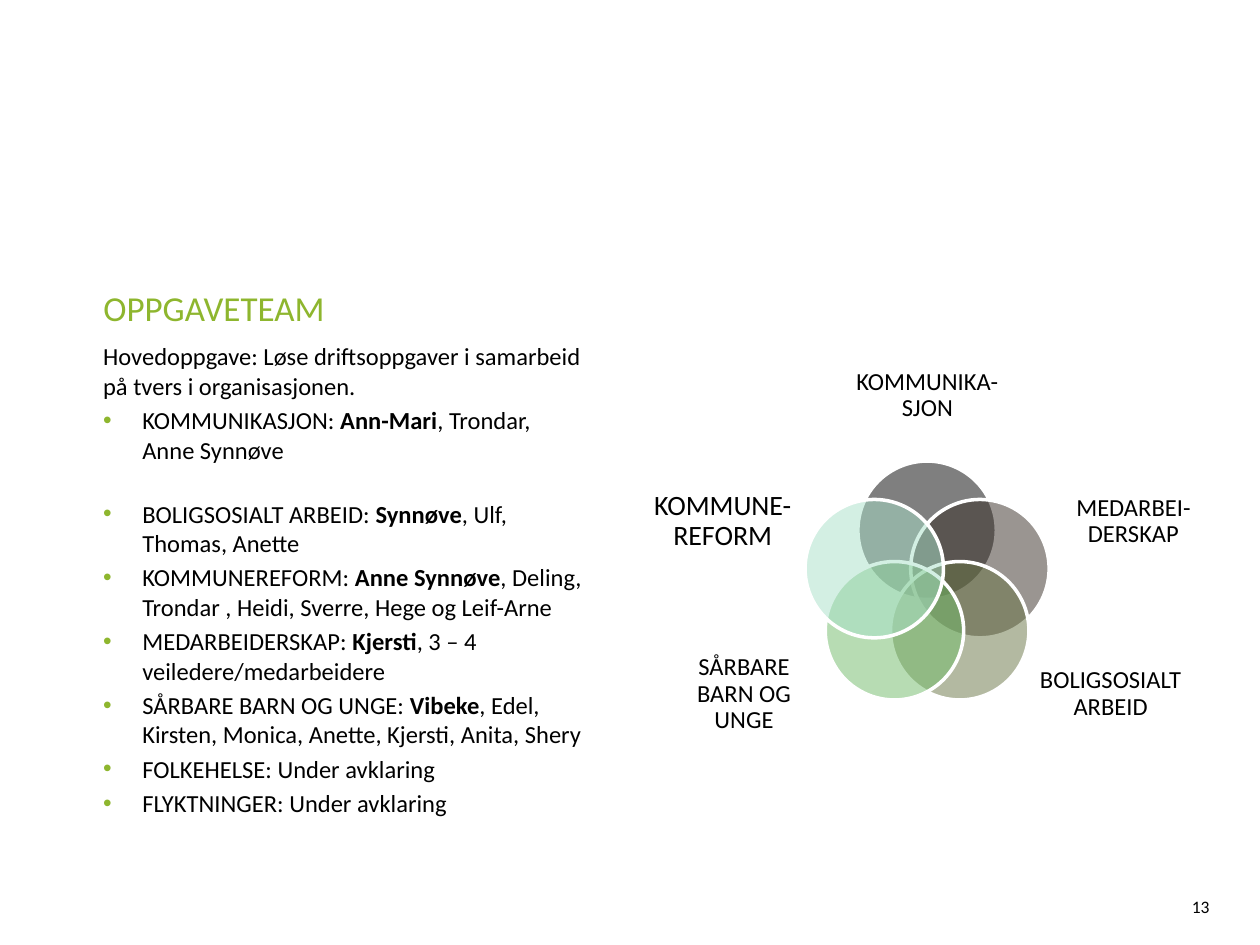
import math
from typing import NamedTuple

import pptx
import pptx.dml.color
import pptx.enum.shapes
import pptx.enum.text
import pptx.oxml.ns
import pptx.util
from lxml import etree

Cm, Pt = pptx.util.Cm, pptx.util.Pt
ALIGN = pptx.enum.text.PP_ALIGN
ANCHOR = pptx.enum.text.MSO_ANCHOR
qn = pptx.oxml.ns.qn

FONT = "Calibri"
COLORS = {"text": "000000", "accent": "8EB62E", "line": "FFFFFF"}


class Box(NamedTuple):
    left: float
    top: float
    width: float
    height: float


class Team(NamedTuple):
    head: str
    lead: str = ""
    rest: str = ""
    after: float = 0


class Petal(NamedTuple):
    label: str
    box: Box
    fill: str
    size: float = 14


TITLE = Box(1.83, 3.53, 8.36, 3.23)
BODY = Box(1.83, 6.76, 10.26, 9.98)
NUMBER = Box(22.91, 17.93, 2.59, 0.99)

INTRO = "Hovedoppgave: Løse driftsoppgaver i samarbeid på tvers i organisasjonen."
TEAMS = [
    Team("KOMMUNIKASJON: ", "Ann-Mari", ", Trondar,\vAnne Synnøve", 17),
    Team("BOLIGSOSIALT ARBEID: ", "Synnøve", ", Ulf, Thomas, Anette"),
    Team("KOMMUNEREFORM: ", "Anne Synnøve",
         ", Deling, Trondar , Heidi, Sverre, Hege og Leif-Arne"),
    Team("MEDARBEIDERSKAP: ", "Kjersti", ", 3 – 4 veiledere/medarbeidere"),
    Team("SÅRBARE BARN OG UNGE: ", "Vibeke",
         ", Edel, Kirsten, Monica, Anette, Kjersti, Anita, Shery"),
    Team("FOLKEHELSE: Under avklaring"),
    Team("FLYKTNINGER: Under avklaring"),
]

# Clockwise from the top of the ring
PETALS = [
    Petal("KOMMUNIKA-SJON", Box(17.07, 7.04, 3.25, 1.88), "000000"),
    Petal("MEDARBEI-DERSKAP", Box(21.39, 9.5, 2.92, 2.03), "362C25"),
    Petal("BOLIGSOSIALT ARBEID", Box(20.93, 12.98, 2.92, 2.03), "697545"),
    Petal("SÅRBARE BARN OG UNGE", Box(13.54, 12.98, 2.92, 2.03), "71BB69"),
    Petal("KOMMUNE-REFORM", Box(13.11, 9.5, 2.92, 2.03), "A9E1C9", 16),
]
HUB_X, HUB_Y, RING, DIAM = 18.69, 11.81, 1.12, 2.79


def rgb(code: str):
    return pptx.dml.color.RGBColor.from_string(code)


def place(box: Box) -> list:
    return [Cm(n) for n in box]


def add_run(para, text: str, size: float = 14, color: str = "text",
            bold: bool = False) -> None:
    for i, part in enumerate(text.split("\v")):
        if i:
            para.add_line_break()
        run = para.add_run()
        run.text = part
        run.font.name = FONT
        run.font.size = Pt(size)
        run.font.bold = bold
        run.font.color.rgb = rgb(COLORS[color])


def add_text(slide, box: Box):
    frame = slide.shapes.add_textbox(*place(box)).text_frame
    frame.word_wrap = True
    return frame


def add_bullet(para) -> None:
    props = para._p.get_or_add_pPr()
    props.set("marL", str(Cm(0.79)))
    props.set("indent", str(-Cm(0.79)))
    tint = etree.SubElement(props, qn("a:buClr"))
    etree.SubElement(tint, qn("a:srgbClr"), val=COLORS["accent"])
    etree.SubElement(props, qn("a:buFont"), typeface="Arial")
    etree.SubElement(props, qn("a:buChar"), char="•")


def add_team(frame, team: Team) -> None:
    para = frame.add_paragraph()
    add_bullet(para)
    para.space_before = Pt(2.8)
    para.space_after = Pt(team.after)
    add_run(para, team.head)
    if team.lead:
        add_run(para, team.lead, bold=True)
        add_run(para, team.rest)


def add_petal(slide, petal: Petal, angle: float) -> None:
    x = HUB_X + RING * math.sin(angle) - DIAM / 2
    y = HUB_Y - RING * math.cos(angle) - DIAM / 2
    disc = slide.shapes.add_shape(
        pptx.enum.shapes.MSO_SHAPE.OVAL, *place(Box(x, y, DIAM, DIAM)))
    disc.shadow.inherit = False
    disc.fill.solid()
    disc.fill.fore_color.rgb = rgb(petal.fill)
    tint = disc._element.spPr.find(qn("a:solidFill"))[0]
    etree.SubElement(tint, qn("a:alpha"), val="50000")
    disc.line.color.rgb = rgb(COLORS["line"])
    disc.line.width = Pt(2)

    frame = add_text(slide, petal.box)
    frame.margin_left = frame.margin_right = 0
    frame.margin_top = frame.margin_bottom = 0
    frame.vertical_anchor = ANCHOR.MIDDLE
    para = frame.paragraphs[0]
    para.alignment = ALIGN.CENTER
    para.line_spacing = 0.9
    add_run(para, petal.label, petal.size)


def main() -> None:
    deck = pptx.Presentation()
    deck.slide_width, deck.slide_height = Cm(25.4), Cm(19.05)
    slide = deck.slides.add_slide(deck.slide_layouts[5])

    # Title
    title = slide.shapes.title
    title.left, title.top, title.width, title.height = place(TITLE)
    frame = title.text_frame
    frame.word_wrap = True
    frame.auto_size = pptx.enum.text.MSO_AUTO_SIZE.NONE
    frame.vertical_anchor = ANCHOR.BOTTOM
    frame.paragraphs[0].alignment = ALIGN.LEFT
    add_run(frame.paragraphs[0], "OPPGAVETEAM", 20, "accent")

    # Team list
    frame = add_text(slide, BODY)
    add_run(frame.paragraphs[0], INTRO)
    for team in TEAMS:
        add_team(frame, team)

    # Ring of overlapping circles
    for i, petal in enumerate(PETALS):
        add_petal(slide, petal, math.tau * i / len(PETALS))

    # Slide number
    para = add_text(slide, NUMBER).paragraphs[0]
    para.alignment = ALIGN.CENTER
    add_run(para, "13", 10)

    deck.save("out.pptx")


if __name__ == "__main__":
    main()
